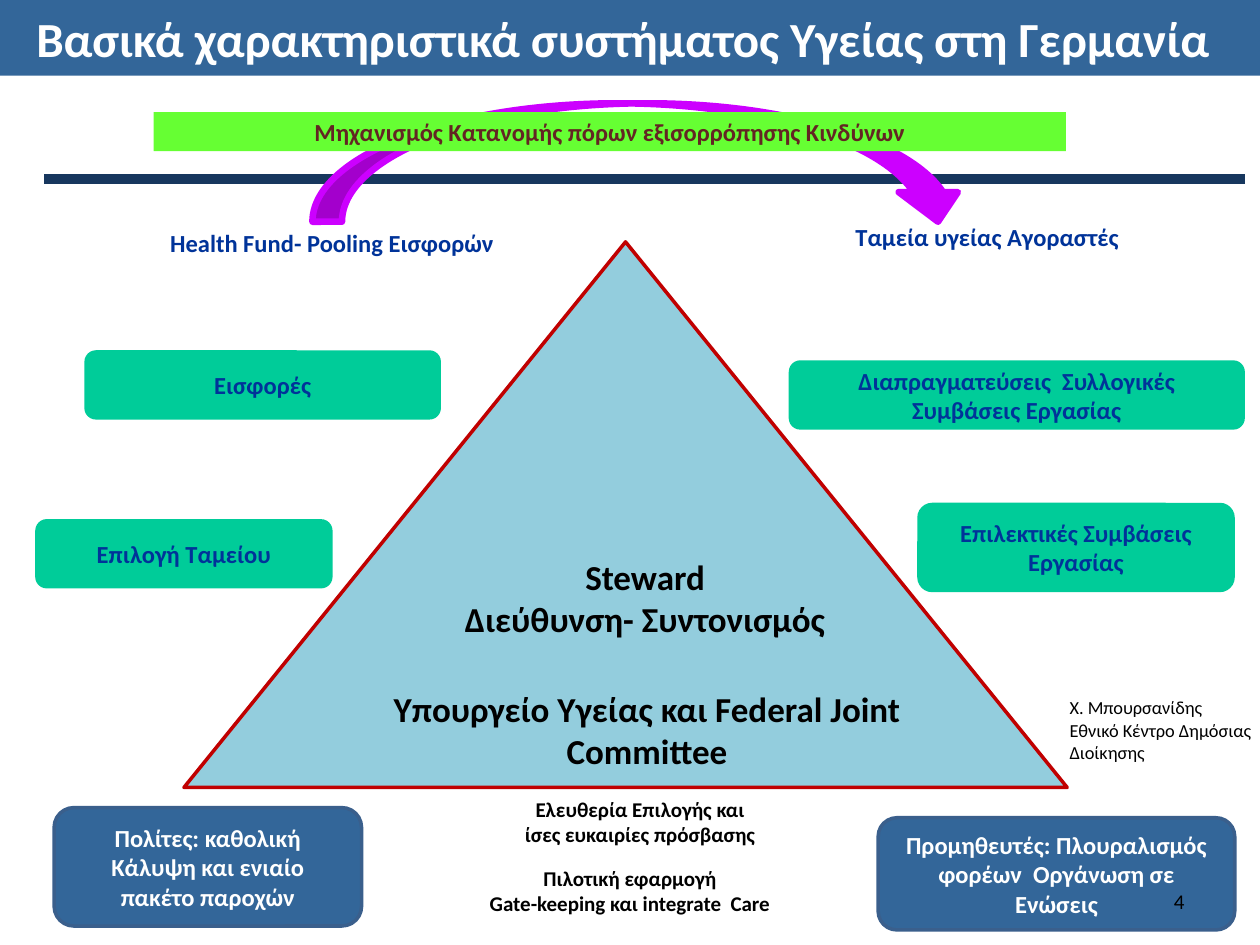
from pptx import Presentation
from pptx.dml.color import RGBColor
from pptx.enum.shapes import MSO_CONNECTOR, MSO_SHAPE
from pptx.enum.text import MSO_ANCHOR, PP_ALIGN
from pptx.oxml.xmlchemy import OxmlElement
from pptx.util import Inches, Pt

ROUND = MSO_SHAPE.ROUNDED_RECTANGLE
RECT = MSO_SHAPE.RECTANGLE
TRIANGLE = MSO_SHAPE.ISOSCELES_TRIANGLE
ARROW = MSO_SHAPE.CURVED_DOWN_ARROW
STRAIGHT = MSO_CONNECTOR.STRAIGHT
TOP, MIDDLE = MSO_ANCHOR.TOP, MSO_ANCHOR.MIDDLE
LEFT, CENTER, RIGHT = PP_ALIGN.LEFT, PP_ALIGN.CENTER, PP_ALIGN.RIGHT

WIDTH, HEIGHT = Inches(10), Inches(7.5)
COLUMNS, ROWS = 100, 75

THEME = {
    "font": "Calibri",
    "blue": "336699", "blue_edge": "3A5F8C", "navy": "17375E",
    "sky": "93CDDD", "red": "C00000", "mint": "00CC99", "ink": "003399",
    "violet": "CC00FF", "lime": "66FF33", "maroon": "632523",
    "white": "FFFFFF", "black": "000000",
    "title": 28, "steward": 20, "body": 14, "small": 12, "credit": 10.5,
}

ROLES = {
    "actor": dict(form=ROUND, fill="blue", line=("blue_edge", 2), color="white"),
    "pyramid": dict(form=TRIANGLE, fill="sky", line=("red", 2)),
    "process": dict(form=ROUND, fill="mint", color="ink"),
    "label": dict(form=ROUND, color="ink"),
    "steward": dict(size="steward", anchor=TOP),
    "access": dict(size="small", anchor=TOP),
    "transfer": dict(form=ARROW, fill="violet", line=("violet", 3.75)),
    "mechanism": dict(form=RECT, fill="lime", color="maroon"),
    "credit": dict(size="credit", bold=False, anchor=TOP, align=LEFT),
    "title": dict(form=RECT, fill="blue", color="white", size="title",
                  align=LEFT, indent=0.19),
    "page": dict(size="small", bold=False, align=RIGHT),
}

BEHIND_RULE = [
    ("actor", (4.3, 64.1, 24.4, 9.4), ["Πολίτες: καθολική Κάλυψη και ενιαίο πακέτο παροχών"]),
    ("actor", (69.7, 64.9, 28.3, 8.9), ["Προμηθευτές: Πλουραλισμός φορέων  Οργάνωση σε Ενώσεις"]),
    ("pyramid", (14.6, 19.2, 70.1, 43.3), []),
    ("process", (2.8, 41.2, 23.6, 5.5), ["Επιλογή Ταμείου"]),
    ("process", (6.7, 27.8, 28.3, 5.5), ["Εισφορές"]),
    ("process", (62.6, 28.6, 36.2, 5.5), ["Διαπραγματεύσεις  Συλλογικές Συμβάσεις Εργασίας"]),
    ("process", (72.8, 39.9, 25.2, 7.1), ["Επιλεκτικές Συμβάσεις Εργασίας"]),
    ("label", (12.2, 16.5, 28.3, 5.5), ["Health Fund- Pooling Εισφορών"]),
    ("label", (64.2, 16, 28.3, 5.5), ["Ταμεία υγείας Αγοραστές"]),
    ("steward", (23.8, 54.1, 55.1, 7.7), ["Υπουργείο Υγείας και Federal Joint Committee"]),
    ("steward", (33.5, 43.6, 35.4, 7.7), ["Steward", "Διεύθυνση- Συντονισμός"]),
    ("access", (31.9, 62.7, 37.8, 5), ["Ελευθερία Επιλογής και", "ίσες ευκαιρίες πρόσβασης"]),
    ("access", (31.1, 68.2, 37.8, 5), ["Πιλοτική εφαρμογή", "Gate-keeping και integrate  Care"]),
]
RULE = dict(start=3.5, end=98.8, row=14.2, color="navy", weight=6)
BEFORE_RULE = [
    ("transfer", (24.8, 8.2, 52, 9.4), []),
    ("mechanism", (12.2, 8.9, 72.4, 3.1), ["Μηχανισμός Κατανομής πόρων εξισορρόπησης Κινδύνων"]),
    ("credit", (83.9, 54.8, 16.5, 6.3), ["Χ. Μπουρσανίδης Εθνικό Κέντρο Δημόσιας Διοίκησης"]),
    ("title", (0, 0, 100, 6), ["Βασικά χαρακτηριστικά συστήματος Υγείας στη Γερμανία"]),
    ("page", (71.7, 69.5, 23.3, 4), ["4"]),
]


def across(columns):
    return round(WIDTH * columns / COLUMNS)


def down(rows):
    return round(HEIGHT * rows / ROWS)


def rgb(name):
    return RGBColor.from_string(THEME[name])


def write(frame, lines, role):
    frame.word_wrap = True
    frame.vertical_anchor = role.get("anchor", MIDDLE)
    face = {
        "name": THEME["font"],
        "size": Pt(THEME[role.get("size", "body")]),
        "bold": role.get("bold", True),
    }
    for index, line in enumerate(lines):
        paragraph = frame.add_paragraph() if index else frame.paragraphs[0]
        paragraph.alignment = role.get("align", CENTER)
        if "indent" in role:
            properties = paragraph._p.get_or_add_pPr()
            properties.set("marL", str(Inches(role["indent"])))
            properties.set("indent", "0")
        run = paragraph.add_run()
        run.text = line
        for attribute, value in face.items():
            setattr(run.font, attribute, value)
        run.font.color.rgb = rgb(role.get("color", "black"))


def paint(shape, role):
    shape.shadow.inherit = False
    if "fill" in role:
        shape.fill.solid()
        shape.fill.fore_color.rgb = rgb(role["fill"])
    else:
        shape.fill.background()
    if "line" in role:
        color, weight = role["line"]
        shape.line.color.rgb = rgb(color)
        shape.line.width = Pt(weight)
    else:
        shape.line.fill.background()


def place(slide, parts):
    for name, (left, top, width, height), lines in parts:
        role = ROLES[name]
        box = across(left), down(top), across(width), down(height)
        if "form" in role:
            shape = slide.shapes.add_shape(role["form"], *box)
            paint(shape, role)
        else:
            shape = slide.shapes.add_textbox(*box)
        if lines:
            write(shape.text_frame, lines, role)


def draw_rule(slide):
    row = down(RULE["row"])
    rule = slide.shapes.add_connector(
        STRAIGHT, across(RULE["start"]), row, across(RULE["end"]), row)
    rule.line.color.rgb = rgb(RULE["color"])
    rule.line.width = Pt(RULE["weight"])
    rule._element.spPr.append(OxmlElement("a:effectLst"))


def main():
    deck = Presentation()
    deck.slide_width, deck.slide_height = WIDTH, HEIGHT
    slide = deck.slides.add_slide(deck.slide_layouts[6])
    place(slide, BEHIND_RULE)
    draw_rule(slide)
    place(slide, BEFORE_RULE)
    deck.save("out.pptx")


if __name__ == "__main__":
    main()
